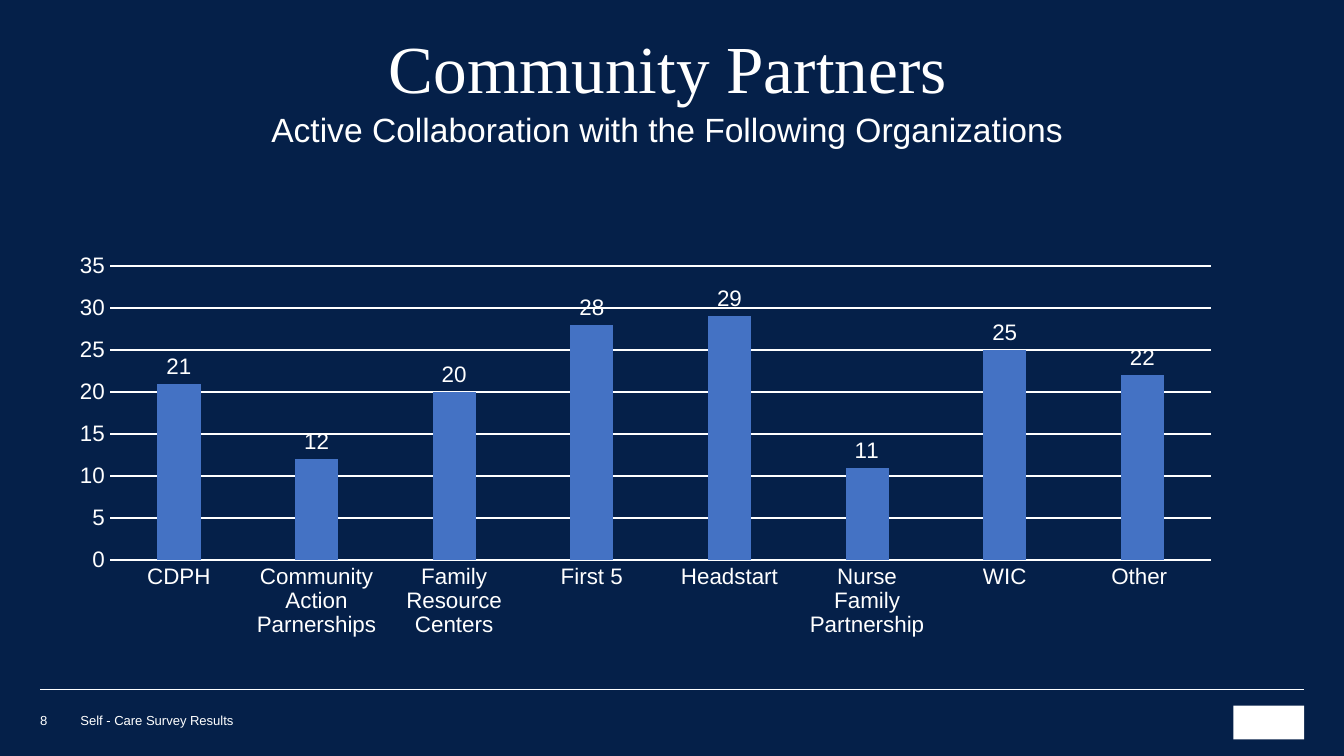
from dataclasses import dataclass

from lxml import etree
from pptx import Presentation
from pptx import util as u
from pptx.chart.data import CategoryChartData
from pptx.dml.color import RGBColor
from pptx.enum import chart as charts, shapes, text
from pptx.oxml import parse_xml
from pptx.oxml.ns import nsdecls, qn

NAVY, WHITE, BLUE = "052049", "FFFFFF", "4472C4"
SANS, SERIF = "Arial", "Times New Roman"


@dataclass
class Label:
    wording: str
    left: float
    top: float
    width: float
    height: float
    size: float
    font: str = SANS
    centred: bool = False
    anchor: text.MSO_ANCHOR = text.MSO_ANCHOR.BOTTOM
    inset: tuple[float, float] = (0, 0)  # horizontal, vertical
    line_spacing: float = 1.0


LABELS = [
    Label("Community Partners", 1.27, 0.89, 22.71, 1.27, 36, SERIF,
          centred=True, inset=(0.25, 0.13), line_spacing=0.85),
    Label("Active Collaboration with the Following Organizations",
          1.27, 1.93, 22.68, 0.99, 18, centred=True,
          anchor=text.MSO_ANCHOR.TOP, inset=(0.25, 0.13)),
    Label("Self - Care Survey Results", 1.52, 13.49, 11.96, 0.28, 7),
    Label("8", 0.76, 13.44, 0.69, 0.33, 7),
]

PARTNERS = {
    "CDPH": 21,
    "Community Action Parnerships": 12,
    "Family Resource Centers": 20,
    "First 5": 28,
    "Headstart": 29,
    "Nurse Family Partnership": 11,
    "WIC": 25,
    "Other ": 22,
}
PLOT_AREA = {"x": 0.059, "y": 0.147, "w": 0.929, "h": 0.564}


def colour(value: str) -> RGBColor:
    return RGBColor.from_string(value)


def style_font(font, size: float, name: str = SANS) -> None:
    font.size = u.Pt(size)
    font.name = name
    font.color.rgb = colour(WHITE)


def style_line(line, width: float) -> None:
    line.color.rgb = colour(WHITE)
    line.width = u.Pt(width)


def add_label(slide, label: Label) -> None:
    box = slide.shapes.add_textbox(u.Cm(label.left), u.Cm(label.top),
                                   u.Cm(label.width), u.Cm(label.height))
    frame = box.text_frame
    frame.word_wrap = True
    frame.vertical_anchor = label.anchor
    horizontal, vertical = label.inset
    frame.margin_left = frame.margin_right = u.Cm(horizontal)
    frame.margin_top = frame.margin_bottom = u.Cm(vertical)
    paragraph = frame.paragraphs[0]
    paragraph.text = label.wording
    paragraph.line_spacing = label.line_spacing
    if label.centred:
        paragraph.alignment = text.PP_ALIGN.CENTER
    style_font(paragraph.font, label.size, label.font)


def place_plot_area(chart) -> None:
    plot_area = chart.element.find(".//" + qn("c:plotArea"))
    for layout in plot_area.findall(qn("c:layout")):
        plot_area.remove(layout)
    modes = "".join(f'<c:{side}Mode val="edge"/>' for side in "xy")
    sizes = "".join(f'<c:{side} val="{share}"/>' for side, share in PLOT_AREA.items())
    plot_area.insert(0, parse_xml(
        f'<c:layout {nsdecls("c")}><c:manualLayout><c:layoutTarget val="inner"/>'
        f"{modes}{sizes}</c:manualLayout></c:layout>"))


def add_partner_chart(slide) -> None:
    data = CategoryChartData()
    data.categories = list(PARTNERS)
    data.add_series("Series 1", list(PARTNERS.values()))
    chart = slide.shapes.add_chart(
        charts.XL_CHART_TYPE.COLUMN_CLUSTERED,
        u.Cm(0.76), u.Cm(3.58), u.Cm(22.4), u.Cm(9.86), data).chart
    chart.has_title = False
    chart.has_legend = False
    style_font(chart.font, 10)
    place_plot_area(chart)

    # Axes
    for axis in (chart.category_axis, chart.value_axis):
        axis.major_tick_mark = axis.minor_tick_mark = charts.XL_TICK_MARK.NONE
        style_font(axis.tick_labels.font, 12)
    style_line(chart.category_axis.format.line, 0.75)
    values = chart.value_axis
    values.minimum_scale, values.maximum_scale, values.major_unit = 0, 35, 5
    values.format.line.fill.background()
    values.has_major_gridlines = True
    style_line(values.major_gridlines.format.line, 0.75)

    # Columns and their values
    plot = chart.plots[0]
    plot.gap_width, plot.overlap = 219, -27
    plot.vary_by_categories = False
    series = plot.series[0]
    series.format.fill.solid()
    series.format.fill.fore_color.rgb = colour(BLUE)
    labels = series.data_labels
    labels.show_value = True
    labels.position = charts.XL_LABEL_POSITION.OUTSIDE_END
    style_font(labels.font, 12)


def add_footer_marks(slide) -> None:
    rule = slide.shapes.add_connector(shapes.MSO_CONNECTOR.STRAIGHT,
                                      u.Cm(0.76), u.Cm(13.02), u.Cm(24.64), u.Cm(13.02))
    style_line(rule.line, 0.25)
    etree.SubElement(rule.element.spPr, qn("a:effectLst"))

    emblem = slide.shapes.add_shape(shapes.MSO_SHAPE.RECTANGLE,
                                    u.Cm(23.31), u.Cm(13.34), u.Cm(1.34), u.Cm(0.64))
    emblem.shadow.inherit = False
    emblem.fill.solid()
    emblem.fill.fore_color.rgb = colour(WHITE)
    emblem.line.fill.background()


def main() -> None:
    presentation = Presentation()
    presentation.slide_width, presentation.slide_height = u.Cm(25.4), u.Cm(14.29)
    slide = presentation.slides.add_slide(presentation.slide_layouts[6])
    slide.background.fill.solid()
    slide.background.fill.fore_color.rgb = colour(NAVY)

    add_footer_marks(slide)
    for label in LABELS:
        add_label(slide, label)
    add_partner_chart(slide)
    presentation.save("out.pptx")


if __name__ == "__main__":
    main()
